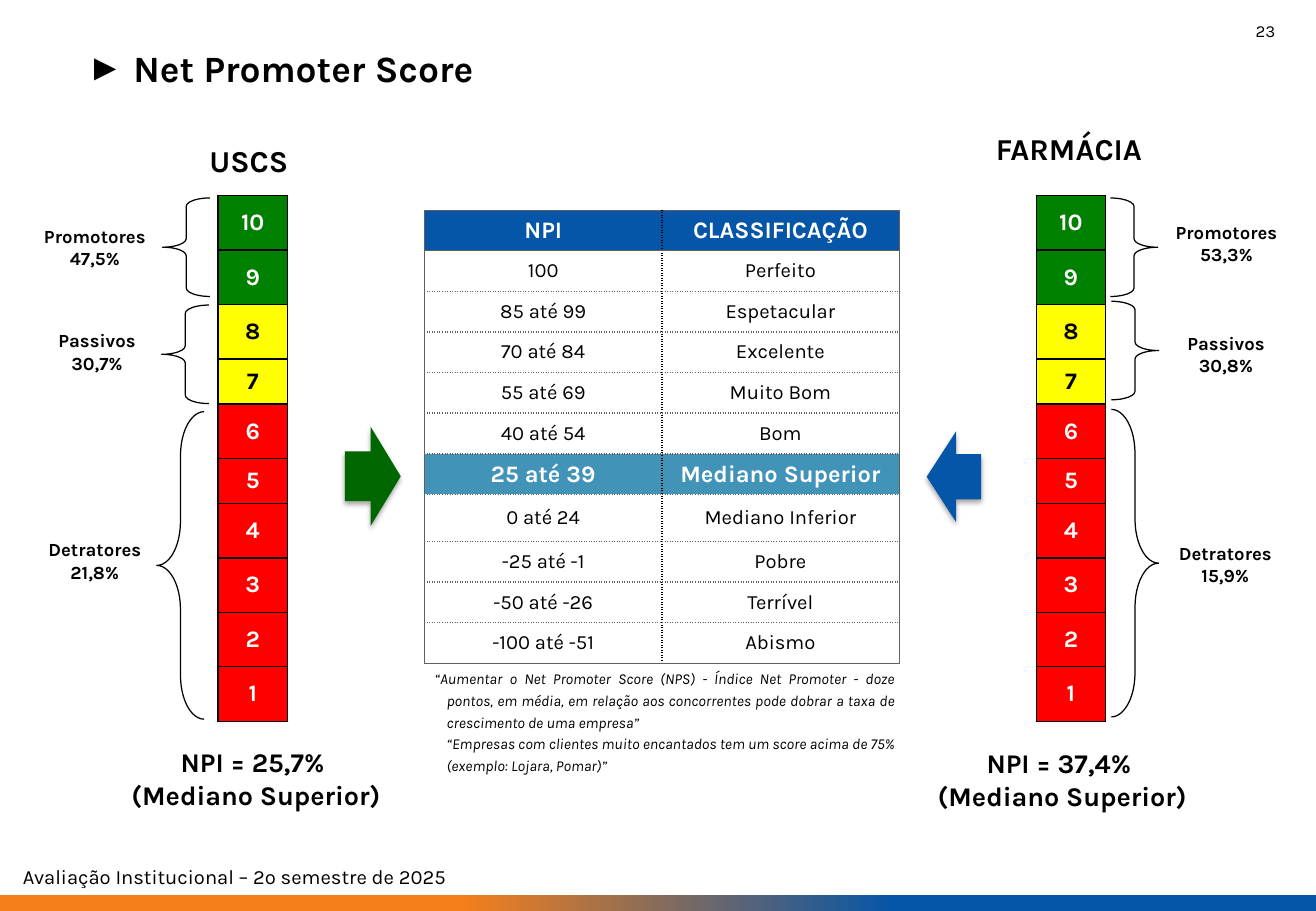
from dataclasses import dataclass
from lxml.etree import SubElement
from pptx import Presentation
from pptx.dml.color import RGBColor
from pptx.enum.shapes import MSO_SHAPE
from pptx.enum.text import MSO_ANCHOR, PP_ALIGN
from pptx.oxml.ns import qn
from pptx.util import Cm, Pt

INK = {
    "black": "000000", "white": "FFFFFF", "grey": "606060",
    "blue": "0555A8", "orange": "F57F1B", "teal": "4293B8", "leaf": "006600",
    "green": "008000", "yellow": "FFFF00", "red": "FF0000",
}
FONT = "Karla"
Box = tuple[float, float, float, float]
Edge = tuple[str, float, str]
MID, TOP = MSO_ANCHOR.MIDDLE, MSO_ANCHOR.TOP


@dataclass
class Group:
    name: str
    share: str
    label: Box
    brace: Box


@dataclass
class Side:
    name: str
    head: Box
    score: str
    foot: Box
    scale: float
    arrow: Box
    tint: str
    arrow_turn: int
    brace_turn: int
    groups: list[Group]


SIDES = [
    Side("FARMÁCIA", (19.28, 2.46, 6.15, 1.3), "37,4%", (18.03, 15.49, 8.23, 1.63),
         21.67, (19.38, 9.02, 1.14, 1.9), "blue", 0, 180, [
             Group("Promotores", "53,3%", (24.23, 4.5, 2.84, 1.19), (23.22, 4.14, 0.99, 2.06)),
             Group("Passivos", "30,8%", (24, 6.81, 3.28, 1.19), (23.24, 6.3, 0.99, 2.06)),
             Group("Detratores", "15,9%", (24, 11.2, 3.25, 1.19), (23.24, 8.56, 0.99, 6.43))]),
    Side("USCS", (1.52, 2.84, 7.37, 1.02), "25,7%", (2.01, 15.47, 6.55, 1.63),
         4.56, (7.21, 8.92, 1.17, 2.08), "leaf", 180, 0, [
             Group("Promotores", "47,5%", (0.46, 4.57, 3.05, 1.24), (3.4, 4.14, 0.99, 2.06)),
             Group("Passivos", "30,7%", (0.38, 6.76, 3.3, 1.19), (3.38, 6.38, 0.99, 2.06)),
             Group("Detratores", "21,8%", (0.36, 11.13, 3.25, 1.19), (3.28, 8.61, 0.99, 6.43))]),
]

RANKS = [
    ("NPI", "CLASSIFICAÇÃO"), ("100", "Perfeito"), ("85 até 99", "Espetacular"),
    ("70 até 84", "Excelente"), ("55 até 69", "Muito Bom"), ("40 até 54", "Bom"),
    ("25 até 39", "Mediano Superior"), ("0 até 24", "Mediano Inferior"),
    ("-25 até -1", "Pobre"), ("-50 até -26", "Terrível"), ("-100 até -51", "Abismo"),
]
QUOTES = [
    "“Aumentar o Net Promoter Score (NPS) - Índice Net Promoter - doze pontos, em média, "
    "em relação aos concorrentes pode dobrar a taxa de crescimento de uma empresa”",
    "“Empresas com clientes muito encantados tem um score acima de 75% "
    "(exemplo: Lojara, Pomar)”",
]

deck = Presentation()
deck.slide_width, deck.slide_height = Cm(27.52), Cm(19.05)
slide = deck.slides.add_slide(deck.slide_layouts[6])


def rgb(name: str) -> RGBColor:
    return RGBColor.from_string(INK[name])


def style(para, size: float, bold: bool = False, tint: str = "black", align=PP_ALIGN.CENTER):
    para.alignment = align
    font = para.font
    font.name, font.size, font.bold = FONT, Pt(size), bold
    font.color.rgb = rgb(tint)


def write(box: Box, lines: list[str], size: float, bold: bool = False,
          align=PP_ALIGN.CENTER, anchor=TOP):
    frame = slide.shapes.add_textbox(*map(Cm, box)).text_frame
    frame.word_wrap = True
    frame.vertical_anchor = anchor
    frame.text = "\n".join(lines)
    for para in frame.paragraphs:
        style(para, size, bold, align=align)
    return frame


def indent(para, left: float, first: float):
    props = para._p.get_or_add_pPr()
    props.set("marL", str(Cm(left)))
    props.set("indent", str(Cm(first)))
    return props


def draw(kind, box: Box, turn: int = 0):
    shape = slide.shapes.add_shape(kind, *map(Cm, box))
    shape.shadow.inherit = False
    shape.rotation = turn
    return shape


def cast(shape):
    """Soft shadow below the shape."""
    glow = SubElement(shape._element.spPr.find(qn("a:effectLst")), qn("a:outerShdw"),
                      blurRad=str(Pt(3.1)), dist=str(Pt(1.8)), dir="5400000", rotWithShape="0")
    tone = SubElement(glow, qn("a:srgbClr"), val=INK["black"])
    SubElement(tone, qn("a:alpha"), val="35000")


def fill_cell(cell, text: str, size: float, bold: bool, tint: str,
              back: str | None, edges: dict[str, Edge]):
    cell.text = text
    cell.vertical_anchor = MID
    style(cell.text_frame.paragraphs[0], size, bold, tint)
    props = cell._tc.get_or_add_tcPr()
    for side in "LRTB":
        shade, width, dash = edges[side]
        line = SubElement(props, qn(f"a:ln{side}"), w=str(Pt(width)))
        SubElement(SubElement(line, qn("a:solidFill")), qn("a:srgbClr"), val=INK[shade])
        SubElement(line, qn("a:prstDash"), val=dash)
    if back:
        cell.fill.solid()
        cell.fill.fore_color.rgb = rgb(back)
    else:
        cell.fill.background()


def add_grid(left: float, top: float, widths: list[float], heights: list[float]):
    grid = slide.shapes.add_table(len(heights), len(widths), Cm(left), Cm(top),
                                  Cm(sum(widths)), Cm(sum(heights))).table
    grid.first_row = grid.horz_banding = False
    for col, width in zip(grid.columns, widths):
        col.width = Cm(width)
    for row, height in zip(grid.rows, heights):
        row.height = Cm(height)
    return grid


def add_scale(left: float):
    marks = range(10, 0, -1)
    grid = add_grid(left, 4.09, [1.45], [0.94 if mark in (7, 5) else 1.14 for mark in marks])
    edges = dict.fromkeys("LRTB", ("black", 1, "solid"))
    for row, mark in enumerate(marks):
        back = "green" if mark > 8 else "yellow" if mark > 6 else "red"
        tint = "black" if back == "yellow" else "white"
        fill_cell(grid.cell(row, 0), str(mark), 14, True, tint, back, edges)


def add_ranks():
    grid = add_grid(8.88, 4.39, [4.96, 4.96], [0.98 if row == 7 else 0.85 for row in range(11)])
    rim, dots, split = ("grey", 0.5, "solid"), ("grey", 1, "sysDot"), ("black", 1, "sysDot")
    for row, pair in enumerate(RANKS):
        back = {0: "blue", 6: "teal"}.get(row)
        for col, text in enumerate(pair):
            edges = {"L": split if col else rim, "R": rim if col else split,
                     "T": rim if row < 2 else dots, "B": rim if row in (0, 10) else dots}
            fill_cell(grid.cell(row, col), text, 14 if back else 12, bool(back),
                      "white" if back else "black", back, edges)


def add_side(side: Side):
    write(side.head, [side.name], 18, True, anchor=MID)
    write(side.foot, [f"NPI = {side.score}", " (Mediano Superior)"], 16, True)
    add_scale(side.scale)
    for group in side.groups:
        write(group.label, [group.name, group.share], 11, True)
        brace = draw(MSO_SHAPE.LEFT_BRACE, group.brace, side.brace_turn)
        brace.adjustments[0] = 0.93 if group.name == "Detratores" else 0.18
        brace.fill.background()
        brace.line.color.rgb = rgb("black")
        brace.line.width = Pt(0.75)
    arrow = draw(MSO_SHAPE.LEFT_ARROW, side.arrow, side.arrow_turn)
    arrow.adjustments[1] = 0.54
    arrow.fill.solid()
    arrow.fill.fore_color.rgb = rgb(side.tint)
    arrow.line.fill.background()
    cast(arrow)


# Footer band
band = draw(MSO_SHAPE.RECTANGLE, (0, 18.72, 27.52, 0.33))
band.line.fill.background()
band.fill.gradient()
band.fill.gradient_angle = 0
for stop, tint, place in zip(band.fill.gradient_stops, ("orange", "blue"), (0.35, 0.68)):
    stop.color.rgb = rgb(tint)
    stop.position = place
write((0.23, 17.95, 27.05, 0.76), ["Avaliação Institucional – 2º semestre de 2025"], 12,
      align=PP_ALIGN.LEFT)

# Title and page number
title = slide.shapes.add_textbox(Cm(0.71), Cm(0.76), Cm(10.26), Cm(1.3)).text_frame
title.word_wrap = True
title.vertical_anchor = MID
title.text = "Net Promoter Score"
props = indent(title.paragraphs[0], 1.83, -0.97)
SubElement(SubElement(props, qn("a:buClr")), qn("a:srgbClr"), val=INK["black"])
SubElement(props, qn("a:buFont"), typeface="Arial")
SubElement(props, qn("a:buChar"), char="►")
style(title.paragraphs[0], 22, True, align=PP_ALIGN.LEFT)
write((18.03, 0.3, 8.89, 1.02), ["23"], 10, align=PP_ALIGN.RIGHT)

# Ranking table and quotes
add_ranks()
quotes = write((8.84, 13.79, 10.11, 2.51), QUOTES, 9, align=PP_ALIGN.JUSTIFY)
for para, first in zip(quotes.paragraphs, (-0.25, 0)):
    indent(para, 0.25, first)
    para.line_spacing = 1.2
    para.font.italic = True

# Scores on both sides
for side in SIDES:
    add_side(side)

deck.save("out.pptx")
